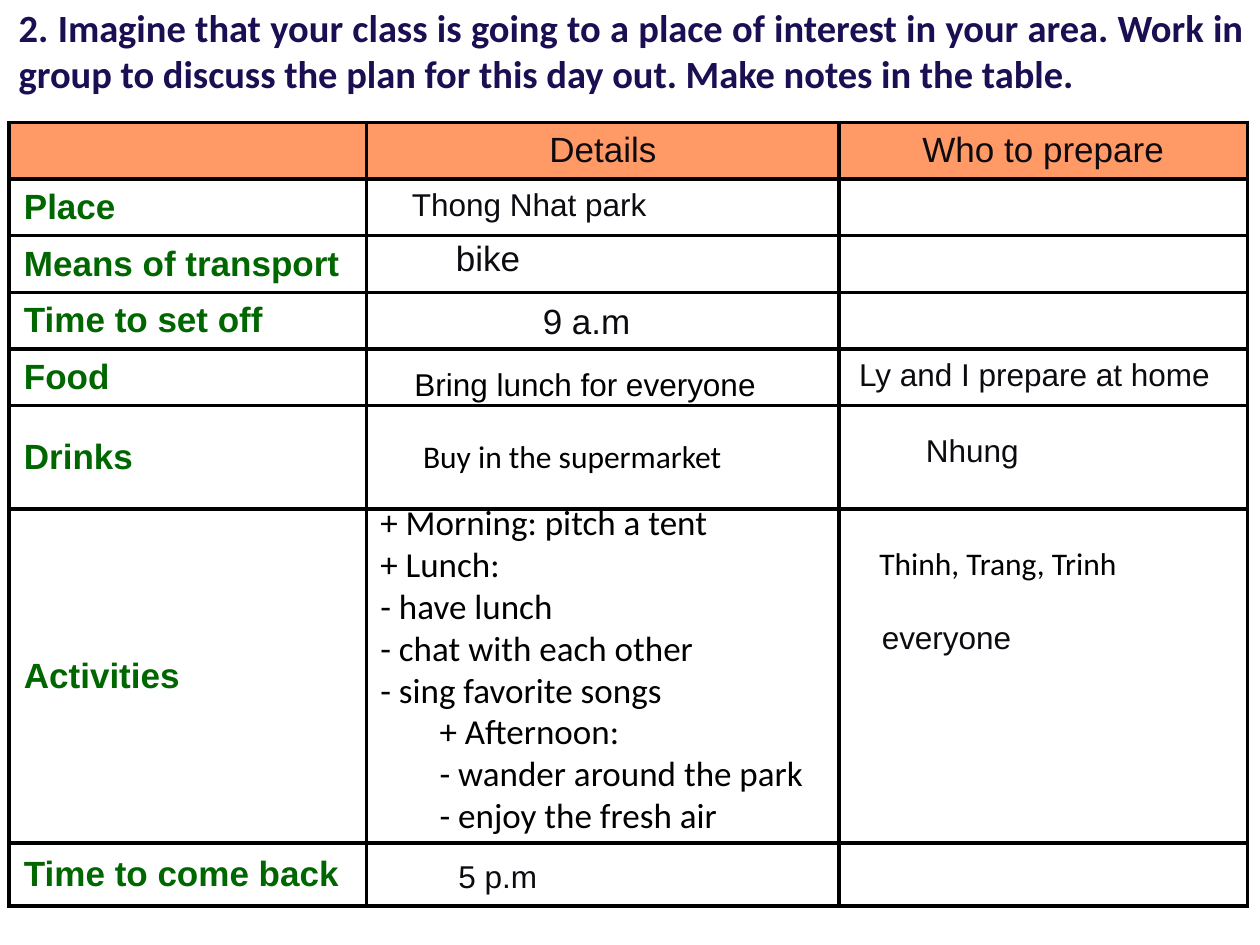
from lxml.etree import SubElement
from pptx import Presentation
from pptx.dml.color import RGBColor as RGB
from pptx.enum.text import MSO_ANCHOR as Anchor, MSO_AUTO_SIZE as Auto, PP_ALIGN as Align
from pptx.oxml.ns import qn
from pptx.util import Inches, Pt

HUES = {
    "navy": "1B0E52", "ink": "0D0A10", "black": "000000",
    "green": "006600", "peach": "FF9966", "white": "FFFFFF",
}
COLS = [2.84, 3.75, 3.24]
ROWS = [0.45] * 5 + [0.82, 2.65, 0.5]
HEADS = ["", "Details", "Who to prepare"]
LABELS = ["Place", "Means of transport", "Time to set off", "Food",
          "Drinks", "Activities", "Time to come back"]
NOTES = [
    ((3.17, 1.42, 2.15, 0.4), "Thong Nhat park", 18, "Arial", "ink"),
    ((3.52, 1.83, 0.72, 0.44), "bike", 20, "Arial", "ink"),
    ((4.21, 2.33, 0.9, 0.44), "9 a.m", 20, "Arial", "ink"),
    ((3.19, 2.85, 2.94, 0.4), "Bring lunch for everyone", 18, "Arial", "black"),
    ((3.26, 3.42, 2.8, 0.4), "Buy in the supermarket", 18, "Calibri", "black"),
    ((3.54, 6.75, 0.83, 0.4), "5 p.m", 18, "Arial", "ink"),
    ((6.72, 2.77, 2.99, 0.4), "Ly and I prepare at home", 18, "Arial", "ink"),
    ((7.25, 3.37, 0.94, 0.4), "Nhung", 18, "Arial", "ink"),
    ((6.9, 4.86, 1.24, 0.4), "everyone", 18, "Arial", "ink"),
    ((6.88, 4.27, 2.12, 0.4), "Thinh, Trang, Trinh", 18, "Calibri", "black"),
]
PLANS = [
    ((2.92, 3.92, 3.53, 1.78),
     ["+ Morning: pitch a tent", "+ Lunch:", "- have lunch",
      "- chat with each other", "- sing favorite songs"]),
    ((3.39, 5.58, 3.28, 1.11),
     ["+ Afternoon:", "- wander around the park", "- enjoy the fresh air"]),
]


def add_run(para, text, size, face, hue, bold=False):
    run = para.add_run()
    run.text = text
    font = run.font
    font.size, font.name, font.bold = Pt(size), face, bold
    font.color.rgb = RGB.from_string(HUES[hue])


def add_text(slide, box, lines, size, face, hue, bold=False, wrap=True, align=Align.LEFT):
    frame = slide.shapes.add_textbox(*map(Inches, box)).text_frame
    frame.word_wrap = wrap
    frame.auto_size = Auto.SHAPE_TO_FIT_TEXT
    for i, line in enumerate(lines):
        para = frame.add_paragraph() if i else frame.paragraphs[0]
        para.alignment = align
        add_run(para, line, size, face, hue, bold)


def add_edges(cell):
    props = cell._tc.get_or_add_tcPr()
    for side in ("lnL", "lnR", "lnT", "lnB"):
        line = SubElement(props, qn(f"a:{side}"), w=str(Pt(2.25)))
        fill = SubElement(line, qn("a:solidFill"))
        SubElement(fill, qn("a:srgbClr"), val=HUES["black"])


def style_cell(cell, text, head):
    add_edges(cell)
    cell.fill.solid()
    cell.fill.fore_color.rgb = RGB.from_string(HUES["peach" if head else "white"])
    cell.margin_left = cell.margin_right = Inches(0.12)
    cell.margin_top = cell.margin_bottom = Inches(0.04)
    cell.vertical_anchor = Anchor.MIDDLE
    if text:
        para = cell.text_frame.paragraphs[0]
        para.alignment = Align.CENTER if head else Align.LEFT
        para.space_after = Pt(6)
        add_run(para, text, 20, "Arial", "ink" if head else "green", not head)


def add_grid(slide, box):
    grid = slide.shapes.add_table(len(ROWS), len(COLS), *map(Inches, box)).table
    for col, width in zip(grid.columns, COLS):
        col.width = Inches(width)
    for row, height in zip(grid.rows, ROWS):
        row.height = Inches(height)
    texts = [HEADS] + [[label, "", ""] for label in LABELS]
    for r, row in enumerate(texts):
        for c, text in enumerate(row):
            style_cell(grid.cell(r, c), text, r == 0)


def add_notes(slide):
    for box, text, size, face, hue in NOTES:
        add_text(slide, box, [text], size, face, hue, wrap=False)
    for box, lines in PLANS:
        add_text(slide, box, lines, 20, "Calibri", "black")


def main():
    deck = Presentation()
    deck.slide_width, deck.slide_height = Inches(10), Inches(7.5)
    slide = deck.slides.add_slide(deck.slide_layouts[6])
    add_grid(slide, (0.07, 0.97, sum(COLS), sum(ROWS)))
    title = ("2. Imagine that your class is going to a place of interest in your area. "
             "Work in group to discuss the plan for this day out. Make notes in the table.")
    add_text(slide, (0.05, -0.02, 9.92, 0.83), [title], 22, "Calibri", "navy",
             bold=True, align=Align.JUSTIFY)
    add_notes(slide)
    deck.save("out.pptx")


if __name__ == "__main__":
    main()
